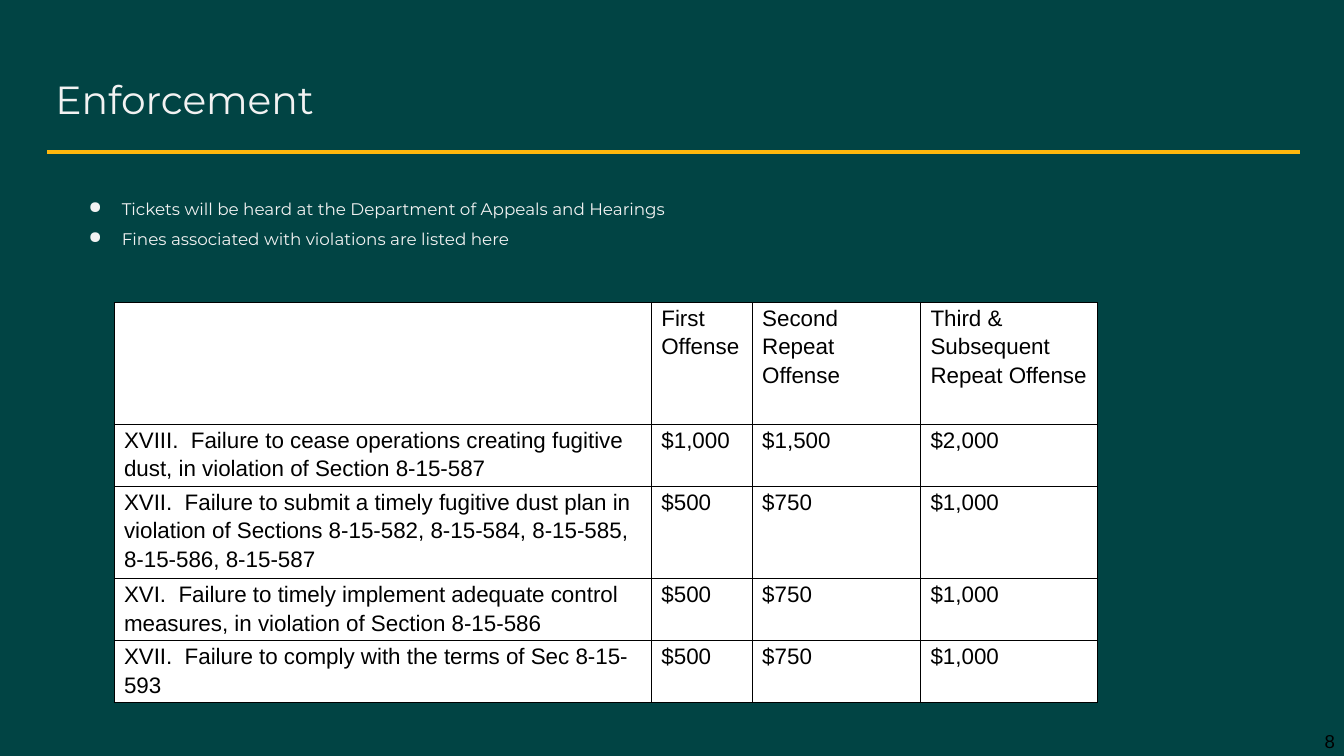
from lxml import etree
from pptx import Presentation
from pptx.dml.color import RGBColor
from pptx.enum.shapes import MSO_CONNECTOR
from pptx.enum.text import MSO_ANCHOR, PP_ALIGN
from pptx.oxml.ns import qn
from pptx.util import Inches, Pt

STRAIGHT = MSO_CONNECTOR.STRAIGHT
TOP, MIDDLE = MSO_ANCHOR.TOP, MSO_ANCHOR.MIDDLE
LEFT, RIGHT = PP_ALIGN.LEFT, PP_ALIGN.RIGHT

COLORS = {"background": "014444", "rule": "FEB70D", "light": "F2F2F2",
          "cell": "FFFFFF", "ink": "000000"}
HEADING, BODY = "Montserrat", "Arial"

BULLETS = ["Tickets will be heard at the Department of Appeals and Hearings",
           "Fines associated with violations are listed here"]
FINES = [
    ("", "First Offense", "Second Repeat Offense", "Third & Subsequent Repeat Offense"),
    ("XVIII.  Failure to cease operations creating fugitive dust, in violation of "
     "Section 8-15-587", "$1,000", "$1,500", "$2,000"),
    ("XVII.  Failure to submit a timely fugitive dust plan in violation of Sections "
     "8-15-582, 8-15-584, 8-15-585, 8-15-586, 8-15-587", "$500", "$750", "$1,000"),
    ("XVI.  Failure to timely implement adequate control measures, in violation of "
     "Section 8-15-586", "$500", "$750", "$1,000"),
    ("XVII.  Failure to comply with the terms of Sec 8-15-593", "$500", "$750", "$1,000"),
]
COLUMN_WIDTHS = [5.33, 1, 1.67, 1.75]
ROW_HEIGHTS = [1.21, 0.6, 0.9, 0.6, 0.6]


def rgb(name):
    return RGBColor.from_string(COLORS[name])


def style(p, size, font, color):
    for r in p.runs:
        r.font.size, r.font.name = Pt(size), font
        r.font.color.rgb = rgb(color)


def set_frame(tf, anchor):
    tf.word_wrap = True
    tf.vertical_anchor = anchor
    tf.margin_left = tf.margin_right = tf.margin_top = tf.margin_bottom = Inches(0.1)


def add_textbox(s, x, y, w, h, anchor=TOP):
    tf = s.shapes.add_textbox(Inches(x), Inches(y), Inches(w), Inches(h)).text_frame
    set_frame(tf, anchor)
    return tf


def add_title(s, x, y, w, h):
    """Fill the title placeholder and draw the rule just below it."""
    title = s.shapes.title
    title.left, title.top, title.width, title.height = map(Inches, (x, y, w, h))
    tf = title.text_frame
    set_frame(tf, TOP)
    tf.text = "Enforcement"
    tf.paragraphs[0].alignment = LEFT
    style(tf.paragraphs[0], 28, HEADING, "light")

    rule_y = Inches(y + h + 0.02)
    rule = s.shapes.add_connector(STRAIGHT, Inches(x + 0.02), rule_y,
                                  Inches(x + w + 0.02), rule_y)
    rule.line.color.rgb = rgb("rule")
    rule.line.width = Pt(3)
    etree.SubElement(rule.element.spPr, qn("a:effectLst"))


def add_bullets(s, x, y, w, h):
    tf = add_textbox(s, x, y, w, h)
    tf.text = "\n".join(BULLETS)
    for p in tf.paragraphs:
        pPr = p._p.get_or_add_pPr()
        pPr.set("marL", str(Inches(0.5)))
        pPr.set("indent", str(Inches(-0.33)))
        color = etree.SubElement(pPr, qn("a:buClr"))
        etree.SubElement(color, qn("a:srgbClr"), val=COLORS["light"])
        etree.SubElement(pPr, qn("a:buChar"), char="●")
        p.line_spacing = 1.5
        style(p, 12, HEADING, "light")


def add_borders(cell):
    tcPr = cell._tc.get_or_add_tcPr()
    for side in ("lnL", "lnR", "lnT", "lnB"):
        line = etree.SubElement(tcPr, qn(f"a:{side}"), w=str(Pt(0.5)))
        fill = etree.SubElement(line, qn("a:solidFill"))
        etree.SubElement(fill, qn("a:srgbClr"), val=COLORS["ink"])


def add_fines_table(s, x, y):
    table = s.shapes.add_table(
        len(FINES), len(COLUMN_WIDTHS), Inches(x), Inches(y),
        Inches(sum(COLUMN_WIDTHS)), Inches(sum(ROW_HEIGHTS))).table
    table.first_row = table.horz_banding = False
    for column, width in zip(table.columns, COLUMN_WIDTHS):
        column.width = Inches(width)
    for row, height, texts in zip(table.rows, ROW_HEIGHTS, FINES):
        row.height = Inches(height)
        for cell, text in zip(row.cells, texts):
            add_borders(cell)
            cell.fill.solid()
            cell.fill.fore_color.rgb = rgb("cell")
            cell.margin_left = cell.margin_right = Inches(0.1)
            cell.margin_top = cell.margin_bottom = 0
            cell.text = text
            p = cell.text_frame.paragraphs[0]
            p.line_spacing = 1.15
            style(p, 16, BODY, "ink")


def add_page_number(s, x, y, w, h):
    tf = add_textbox(s, x, y, w, h, MIDDLE)
    tf.text = "8"
    tf.paragraphs[0].alignment = RIGHT
    style(tf.paragraphs[0], 13.3, BODY, "ink")


def main():
    prs = Presentation()
    prs.slide_width, prs.slide_height = Inches(13.33), Inches(7.5)
    s = prs.slides.add_slide(prs.slide_layouts[5])
    s.background.fill.solid()
    s.background.fill.fore_color.rgb = rgb("background")
    add_title(s, 0.45, 0.65, 12.42, 0.84)
    add_page_number(s, 12.81, 7.21, 0.53, 0.29)
    add_bullets(s, 0.61, 1.77, 11.92, 1.26)
    add_fines_table(s, 1.13, 3)
    prs.save("out.pptx")


if __name__ == "__main__":
    main()
